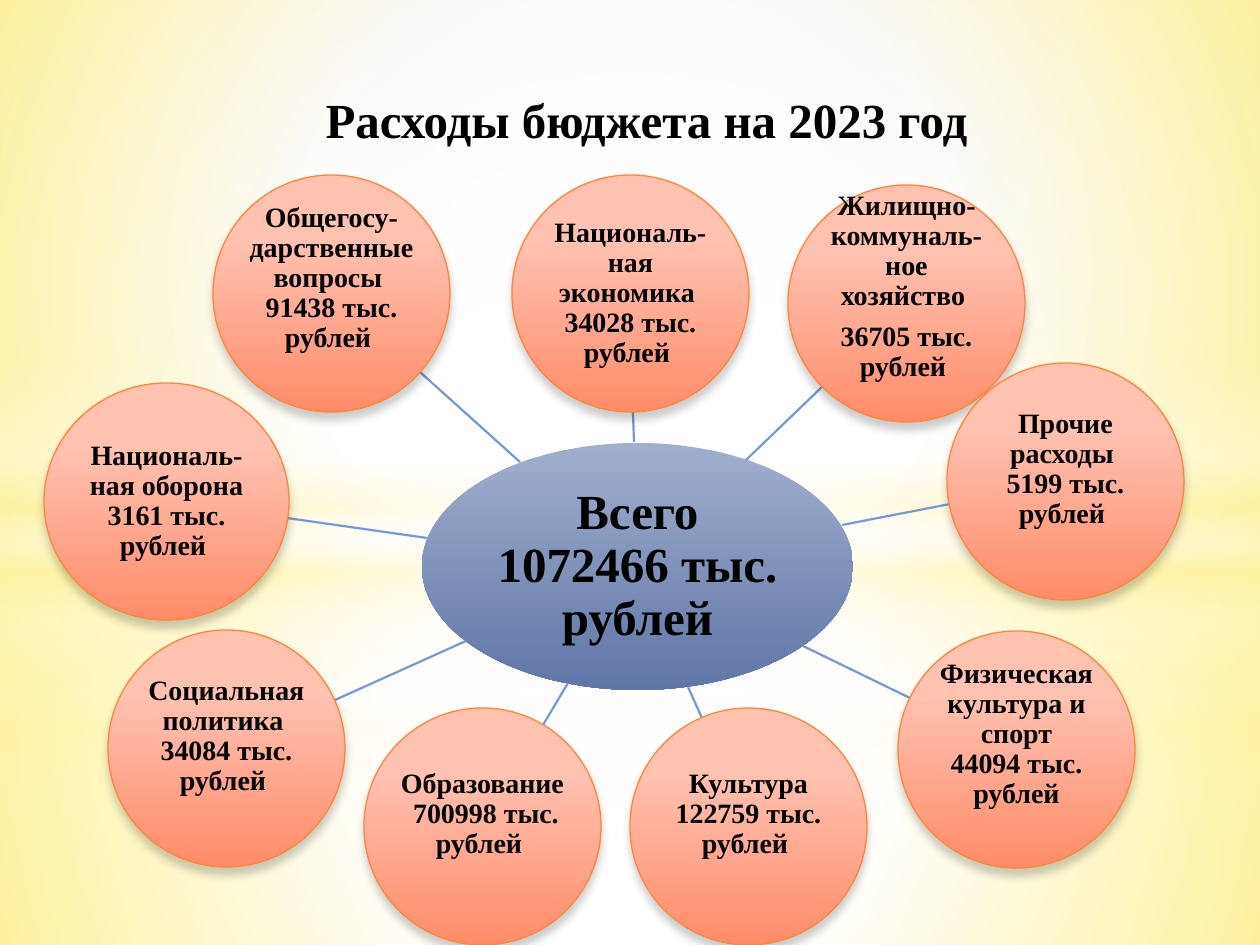
from lxml import etree
from pptx import Presentation
from pptx import util as u
from pptx.dml.color import RGBColor
from pptx.enum import shapes, text
from pptx.oxml.ns import qn

SCALE = 914400 / 126
FONT = "Times New Roman"
COLORS = {
    "white": "FFFFFF", "grey": "D1D1D1", "yellow": "FFF39D", "text": "000000",
    "hub_top": "A1AFCE", "hub_bottom": "6076A7", "spoke": "7598D9",
    "circle_top": "FFC1B0", "circle_bottom": "FE8C69", "circle_line": "FE8637",
}
OVAL = shapes.MSO_SHAPE.OVAL
RECTANGLE = shapes.MSO_SHAPE.RECTANGLE


def set_gradient(fill, holder, stops, focus=None):
    fill.gradient()
    gradient = holder.find(".//" + qn("a:gradFill"))
    for child in list(gradient):
        gradient.remove(child)
    stop_list = etree.SubElement(gradient, qn("a:gsLst"))
    for position, name, alpha in stops:
        stop = etree.SubElement(stop_list, qn("a:gs"), pos=str(position * 1000))
        color = etree.SubElement(stop, qn("a:srgbClr"), val=COLORS[name])
        if alpha < 100:
            etree.SubElement(color, qn("a:alpha"), val=str(alpha * 1000))
    if focus:
        path = etree.SubElement(gradient, qn("a:path"), path="circle")
        sides = {side: str(share * 1000) for side, share in zip("ltrb", focus)}
        etree.SubElement(path, qn("a:fillToRect"), **sides)
    else:
        etree.SubElement(gradient, qn("a:lin"), ang="5400000", scaled="0")


def add_text(frame, paragraphs, size, spacing=0.9):
    for index, runs in enumerate(paragraphs):
        para = frame.paragraphs[0] if index == 0 else frame.add_paragraph()
        para.alignment = text.PP_ALIGN.CENTER
        para.line_spacing = spacing
        para.space_before = u.Pt(0)
        for words in runs:
            span = para.add_run()
            span.text = words
            span.font.name = FONT
            span.font.size = u.Pt(size)
            span.font.bold = True
            span.font.color.rgb = RGBColor.from_string(COLORS["text"])


deck = Presentation()
deck.slide_width, deck.slide_height = int(1260 * SCALE), int(945 * SCALE)
page = deck.slides.add_slide(deck.slide_layouts[5])

background = page.background.fill
background.solid()
set_gradient(background, page.element.find(".//" + qn("p:bgPr")),
             [(0, "white", 100), (42, "white", 100), (100, "grey", 100)],
             (24, 44, 24, 12))

center = (50, 50, 50, 50)
band = [(0, "white", 0), (29, "white", 30), (45, "yellow", 40),
        (55, "white", 26), (65, "yellow", 60), (100, "white", 0)]
layers = []
for split, band_top, shift, glow_end in [(703, 519, 0, 56), (533, 365, 1, 54)]:
    layers += [
        (RECTANGLE, split, 945 - split, center,
         [(0, "white", 91 + shift), (37, "white", 76 + shift), (100, "yellow", 79 + shift)]),
        (RECTANGLE, 0, split, center,
         [(0, "white", 89 + shift), (48, "white", 62 + shift), (100, "yellow", 79 + shift)]),
        (RECTANGLE, band_top, 315, None, band),
        (OVAL, 221, 703, center, [(0, "white", 100), (glow_end, "white", 0)]),
    ]
for kind, top, height, focus, stops in layers:
    layer = page.shapes.add_shape(kind, 0, int(top * SCALE), deck.slide_width, int(height * SCALE))
    layer.shadow.inherit = False
    layer.line.fill.background()
    set_gradient(layer.fill, layer.element.spPr, stops, focus)

hub = page.shapes.add_shape(OVAL, *[int(v * SCALE) for v in (422, 443, 431, 247)])
hub.shadow.inherit = False
hub.line.fill.background()
set_gradient(hub.fill, hub.element.spPr, [(0, "hub_top", 100), (100, "hub_bottom", 100)])

circles = [
    (213, 175, 237, (520, 462, 420, 372), 30, 0,
     [["Общегосу-дарственные вопросы "], ["91438 тыс. рублей "]]),
    (44, 383, 245, (427, 538, 287, 518), 0, 0,
     [["Националь-ная оборона"], ["3161 тыс. рублей "]]),
    (788, 185, 237, (746, 460, 823, 386), 33, 6,
     [["Жилищно-коммуналь-ное", " ", "хозяйство "], ["36705 тыс. рублей "]]),
    (947, 363, 237, (842, 525, 950, 504), 24, 0,
     [["Прочие расходы "], ["5199 тыс. рублей", " "]]),
    (898, 631, 237, (803, 646, 910, 698), 30, 0,
     [["Физическая культура и спорт"], ["44094 тыс. рублей"]]),
    (630, 708, 237, (688, 687, 702, 718), 24, 0,
     [["Культура"], ["122759 тыс. рублей "]]),
    (364, 708, 237, (568, 683, 543, 725), 24, 0,
     [["Образование"], [" 700998 тыс. рублей "]]),
    (108, 630, 237, (466, 641, 335, 700), 24, 0,
     [["Социальная политика "], ["34084 тыс. рублей "]]),
    (512, 175, 237, (634, 442, 633, 412), 0, 0,
     [["Националь-ная экономика "], ["34028 тыс. рублей "]]),
]
labels = [(hub, [["Всего 1072466 тыс. рублей"]], 28, 2, 2, 0)]
for left, top, width, ends, bottom_inset, gap, paragraphs in circles:
    spoke = page.shapes.add_connector(shapes.MSO_CONNECTOR.STRAIGHT,
                                      *[int(v * SCALE) for v in ends])
    spoke.line.color.rgb = RGBColor.from_string(COLORS["spoke"])
    spoke.line.width = u.Pt(1.25)
    etree.SubElement(spoke.element.spPr, qn("a:effectLst"))

    circle = page.shapes.add_shape(OVAL, *[int(v * SCALE) for v in (left, top, width, 237)])
    set_gradient(circle.fill, circle.element.spPr,
                 [(28, "circle_top", 100), (100, "circle_bottom", 100)])
    circle.line.color.rgb = RGBColor.from_string(COLORS["circle_line"])
    circle.line.width = u.Pt(0.75)
    circle.shadow.inherit = False
    effects = circle.element.spPr.find(qn("a:effectLst"))
    shadow = etree.SubElement(effects, qn("a:outerShdw"), blurRad=str(u.Pt(5)),
                              dist=str(u.Pt(4)), dir="5400000", rotWithShape="0")
    shade = etree.SubElement(shadow, qn("a:srgbClr"), val=COLORS["text"])
    etree.SubElement(shade, qn("a:alpha"), val="20000")
    labels.append((circle, paragraphs, 16, 1, bottom_inset + 1, gap))

for shape, paragraphs, size, inset, bottom_inset, gap in labels:
    frame = shape.text_frame
    frame.word_wrap = True
    frame.vertical_anchor = text.MSO_ANCHOR.MIDDLE
    frame.margin_left = frame.margin_right = frame.margin_top = int(inset * SCALE)
    frame.margin_bottom = int(bottom_inset * SCALE)
    add_text(frame, paragraphs, size)
    frame.paragraphs[0].space_after = u.Pt(gap)

title = page.shapes.title
title.left, title.top, title.width, title.height = [int(v * SCALE) for v in (34, 96, 1225, 59)]
title.text_frame.word_wrap = True
title.text_frame.auto_size = text.MSO_AUTO_SIZE.NONE
title.text_frame.vertical_anchor = text.MSO_ANCHOR.BOTTOM
add_text(title.text_frame, [["Расходы бюджета на 2023 год"]], 28, 1.0)
title.element.getparent().append(title.element)

deck.save("out.pptx")
